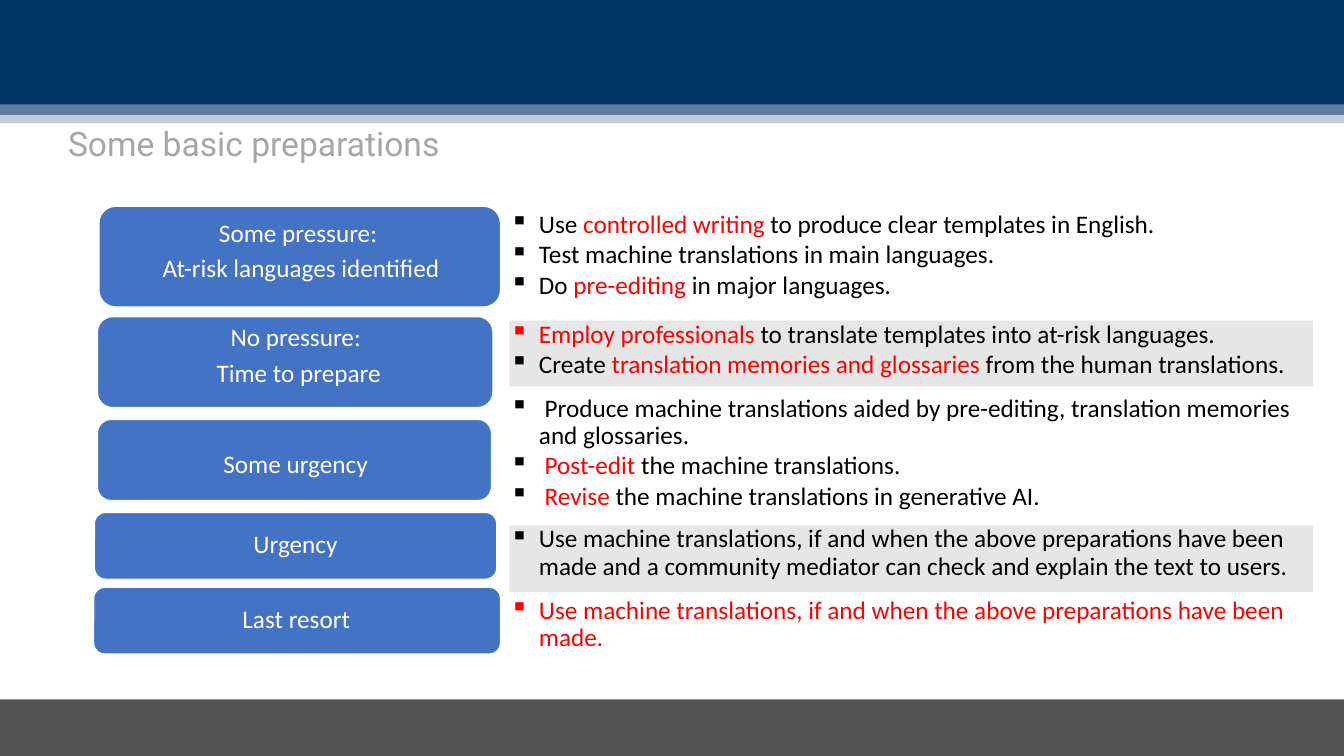
from dataclasses import dataclass

from lxml.etree import SubElement
from pptx import Presentation
from pptx.dml.color import RGBColor
from pptx.enum.shapes import MSO_SHAPE as Shape
from pptx.enum.text import MSO_ANCHOR as Anchor, PP_ALIGN as Align
from pptx.oxml.ns import qn
from pptx.util import Inches, Pt


@dataclass(frozen=True)
class Theme:
    navy: str = "003366"
    black: str = "000000"
    white: str = "FFFFFF"
    blue: str = "4472C4"
    red: str = "FF0000"
    panel: str = "E7E6E6"
    title: str = "A6A6A6"
    title_font: str = "Roboto"
    body_font: str = "Calibri"
    title_size: int = 32
    body_size: int = 24


THEME = Theme()
SLIDE_WIDTH, SLIDE_HEIGHT = 17.78, 10
ADVICE_LEFT = 6.74

# Text between asterisks is red.
# Each row: button box, label box, label lines.
STAGES = [
    ((1.31, 2.73, 5.31, 1.33), (1.39, 2.79, 5.18, 1.08),
     ["Some pressure: ", "At-risk languages identified"]),
    ((1.29, 4.19, 5.23, 1.2), (1.4, 4.32, 5.1, 0.79),
     ["No pressure: ", "Time to prepare"]),
    ((1.29, 5.55, 5.21, 1.07), (1.37, 5.79, 5.08, 0.73), ["Some urgency"]),
    ((1.25, 6.78, 5.32, 0.88), (1.31, 6.82, 5.2, 0.79), ["Urgency"]),
    ((1.24, 7.77, 5.38, 0.88), (1.29, 7.81, 5.26, 0.79), ["Last resort"]),
]

# Each row: top, width, height, shaded, bullet lines.
ADVICE = [
    (2.79, 10.79, 1.2, False,
     ["Use *controlled writing *to produce clear templates in English.",
      "Test machine translations in main languages.",
      "Do *pre-editing* in major languages."]),
    (4.24, 10.63, 0.87, True,
     ["*Employ professionals *to translate templates into at-risk languages.",
      "Create *translation memories and glossaries *from the human translations."]),
    (5.22, 10.79, 1.64, False,
     [" Produce machine translations aided by pre-editing, "
      "translation memories and glossaries.",
      " *Post-edit *the machine translations.",
      " *Revise* the machine translations in generative AI."]),
    (6.95, 10.63, 0.88, True,
     ["Use machine translations, if and when the above preparations have been "
      "made and a community mediator can check and explain the text to users."]),
    (7.89, 10.52, 1.09, False,
     ["*Use machine translations, if and when the above preparations have been "
      "made.*"]),
]


def inches(box):
    return [Inches(value) for value in box]


def add_box(shapes, box, fill, kind=Shape.RECTANGLE, line=None, opacity=100):
    shape = shapes.add_shape(kind, *inches(box))
    shape.shadow.inherit = False
    shape.fill.solid()
    shape.fill.fore_color.rgb = RGBColor.from_string(fill)
    if opacity < 100:
        color = shape.fill._xPr.find(qn("a:solidFill"))[0]
        SubElement(color, qn("a:alpha"), val=str(opacity * 1000))
    if line:
        shape.line.color.rgb = RGBColor.from_string(line)
        shape.line.width = Pt(1)
    else:
        shape.line.fill.background()
    return shape


def set_indent(paragraph, left, first=0.0, bullet=None):
    properties = paragraph._p.get_or_add_pPr()
    properties.set("marL", str(Inches(left)))
    properties.set("indent", str(Inches(first)))
    if bullet:
        SubElement(properties, qn("a:buChar"), char=bullet)


def write_text(shape, lines, *, color=THEME.black, font=THEME.body_font,
               size=THEME.body_size, align=Align.LEFT, anchor=Anchor.TOP,
               margins=(0.01, 0.01, 0.01, 0.01), after=0, indent=(0, 0),
               bullet=None):
    """Fill a shape with one paragraph per line; *marked* parts turn red."""
    frame = shape.text_frame
    frame.word_wrap = True
    frame.vertical_anchor = anchor
    (frame.margin_left, frame.margin_top,
     frame.margin_right, frame.margin_bottom) = inches(margins)
    for number, line in enumerate(lines):
        paragraph = frame.add_paragraph() if number else frame.paragraphs[0]
        paragraph.alignment = align
        paragraph.line_spacing = 0.9
        paragraph.space_after = Pt(after)
        set_indent(paragraph, *indent, bullet=bullet)
        for index, part in enumerate(line.split("*")):
            if not part:
                continue
            run = paragraph.add_run()
            run.text = part
            run.font.name = font
            run.font.size = Pt(size)
            run.font.color.rgb = RGBColor.from_string(
                THEME.red if index % 2 else color)


def add_bands(slide):
    group = slide.shapes.add_group_shape()
    for height, opacity in ((1.63, 25), (1.52, 50), (1.38, 100)):
        add_box(group.shapes, (-0.01, 0, 17.81, height), THEME.navy,
                opacity=opacity)
    add_box(slide.shapes, (0, 9.25, SLIDE_WIDTH, 0.79), THEME.black, opacity=67)


def add_title(slide, text):
    shape = slide.shapes.add_textbox(*inches((0.86, 1.69, 16.06, 0.71)))
    write_text(shape, [text], color=THEME.title, font=THEME.title_font,
               size=THEME.title_size, margins=(0, 0, 0.18, 0.09),
               indent=(0.04, 0))


def add_stage(slide, button_box, label_box, lines):
    group = slide.shapes.add_group_shape()
    add_box(group.shapes, button_box, THEME.blue, Shape.ROUNDED_RECTANGLE,
            line=THEME.white)
    label = group.shapes.add_textbox(*inches(label_box))
    write_text(label, lines, color=THEME.white, align=Align.CENTER,
               anchor=Anchor.MIDDLE, margins=(0.06, 0.03, 0.06, 0.03), after=8)


def add_advice(slide, top, width, height, shaded, lines):
    box = (ADVICE_LEFT, top, width, height)
    if shaded:
        shape = add_box(slide.shapes, box, THEME.panel)
    else:
        shape = slide.shapes.add_textbox(*inches(box))
    write_text(shape, lines, after=3, indent=(0.38, -0.38), bullet="▪")


def main():
    presentation = Presentation()
    presentation.slide_width = Inches(SLIDE_WIDTH)
    presentation.slide_height = Inches(SLIDE_HEIGHT)
    slide = presentation.slides.add_slide(presentation.slide_layouts[6])
    add_bands(slide)
    add_title(slide, "Some basic preparations")
    for stage, advice in zip(STAGES, ADVICE):
        add_advice(slide, *advice)
        add_stage(slide, *stage)
    presentation.save("out.pptx")


if __name__ == "__main__":
    main()
